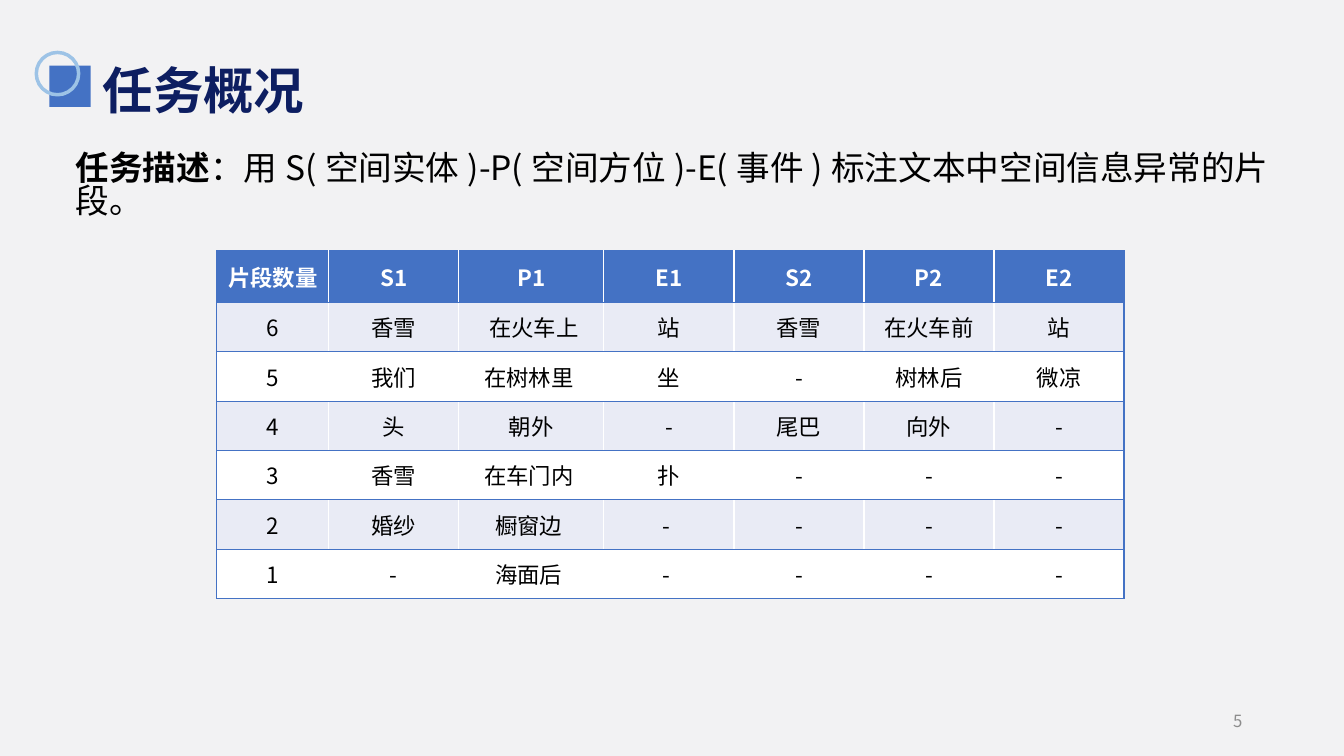
from lxml.etree import SubElement
from pptx import Presentation
from pptx.dml.color import RGBColor
from pptx.enum.shapes import MSO_SHAPE
from pptx.enum.text import MSO_ANCHOR, PP_ALIGN
from pptx.oxml import parse_xml
from pptx.oxml.ns import nsdecls, qn
from pptx.util import Inches, Pt

FONT = "Noto Sans CJK SC"
COLORS = {
    "background": "F2F2F3",
    "blue": "4472C4",
    "ring": "9DC3E6",
    "title": "0D1E61",
    "number": "8C8C8C",
    "band": "E9EBF5",
    "white": "FFFFFF",
    "black": "000000",
}


def color(name):
    return RGBColor.from_string(COLORS[name])


def style_run(run, size, color_name, bold=False):
    run.font.size = Pt(size)
    run.font.bold = bold
    run.font.name = FONT
    run.font.color.rgb = color(color_name)
    SubElement(run.font._element, qn("a:ea")).set("typeface", FONT)


presentation = Presentation()
presentation.slide_width = Inches(13.33)
presentation.slide_height = Inches(7.5)
slide = presentation.slides.add_slide(presentation.slide_layouts[6])
slide.background.fill.solid()
slide.background.fill.fore_color.rgb = color("background")

square = slide.shapes.add_shape(
    MSO_SHAPE.RECTANGLE, Inches(0.49), Inches(0.65), Inches(0.41), Inches(0.41))
square.shadow.inherit = False
square.fill.solid()
square.fill.fore_color.rgb = color("blue")
square.line.fill.background()

ring = slide.shapes.add_shape(
    MSO_SHAPE.OVAL, Inches(0.36), Inches(0.52), Inches(0.42), Inches(0.42))
ring.shadow.inherit = False
ring.fill.background()
ring.line.color.rgb = color("ring")
ring.line.width = Pt(2.5)

text_boxes = [
    ("任务概况", 0.92, 0.63, 11.5, 0.59, 36, "title", True, PP_ALIGN.LEFT, 0.9),
    ("5", 9.42, 6.95, 3, 0.4, 12, "number", False, PP_ALIGN.RIGHT, 1.0),
]
for text, left, top, width, height, size, color_name, bold, align, spacing in text_boxes:
    box = slide.shapes.add_textbox(Inches(left), Inches(top), Inches(width), Inches(height))
    box.text_frame.word_wrap = True
    box.text_frame.vertical_anchor = MSO_ANCHOR.MIDDLE
    paragraph = box.text_frame.paragraphs[0]
    paragraph.text = text
    paragraph.alignment = align
    paragraph.line_spacing = spacing
    style_run(paragraph.runs[0], size, color_name, bold)

description = slide.shapes.add_shape(
    MSO_SHAPE.ROUNDED_RECTANGLE, Inches(0.65), Inches(1.46), Inches(12.03), Inches(0.8))
description.adjustments[0] = 0
description.shadow.inherit = False
description.fill.background()
description.line.fill.background()
frame = description.text_frame
frame.word_wrap = True
frame.vertical_anchor = MSO_ANCHOR.MIDDLE
frame.margin_left = frame.margin_right = Inches(0.1)
frame.margin_top = frame.margin_bottom = Inches(0)
paragraph = frame.paragraphs[0]
paragraph.alignment = PP_ALIGN.JUSTIFY
paragraph.line_spacing = 0.82
for text, bold in [
    ("任务描述", True),
    ("：用S(空间实体)-P(空间方位)-E(事件)标注文本中空间信息异常的片段。", False),
]:
    run = paragraph.add_run()
    run.text = text
    style_run(run, 24, "black", bold)

rows = [
    ["片段数量", "S1", "P1", "E1", "S2", "P2", "E2"],
    ["6", "香雪", " 在火车上", "站", "香雪", "在火车前", "站"],
    ["5", "我们", "在树林里 ", "坐", "-", "树林后", "微凉"],
    ["4", "头", "朝外", "-", "尾巴", "向外", "-"],
    ["3", "香雪", "在车门内 ", "扑", "-", "-", "-"],
    ["2", "婚纱", "橱窗边 ", "- ", "-", "-", "-"],
    ["1", "-", "海面后 ", "- ", "-", "-", "-"],
]
column_widths = [1.11, 1.29, 1.44, 1.29, 1.29, 1.29, 1.29]
table = slide.shapes.add_table(
    len(rows), len(column_widths), Inches(2.15), Inches(2.49), Inches(9.02), Inches(3.47)).table
for column, width in zip(table.columns, column_widths):
    column.width = Inches(width)

for row_index, row in enumerate(rows):
    header = row_index == 0
    table.rows[row_index].height = Inches(0.51 if header else 0.49)
    fill_name = "blue" if header else "band" if row_index % 2 else "white"
    for column_index, text in enumerate(row):
        cell = table.cell(row_index, column_index)
        cell.fill.solid()
        cell.fill.fore_color.rgb = color(fill_name)
        cell.vertical_anchor = MSO_ANCHOR.MIDDLE
        paragraph = cell.text_frame.paragraphs[0]
        paragraph.text = text
        paragraph.alignment = PP_ALIGN.CENTER
        style_run(paragraph.runs[0], 16, "white" if header else "black", header)

        sides = ["lnT", "lnB"]
        if column_index == len(row) - 1:
            sides.insert(0, "lnR")
        if column_index == 0:
            sides.insert(0, "lnL")
        properties = cell._tc.get_or_add_tcPr()
        for position, side in enumerate(sides):
            properties.insert(position, parse_xml(
                f'<a:{side} {nsdecls("a")} w="12700"><a:solidFill>'
                f'<a:srgbClr val="{COLORS["blue"]}"/></a:solidFill></a:{side}>'))

presentation.save("out.pptx")
